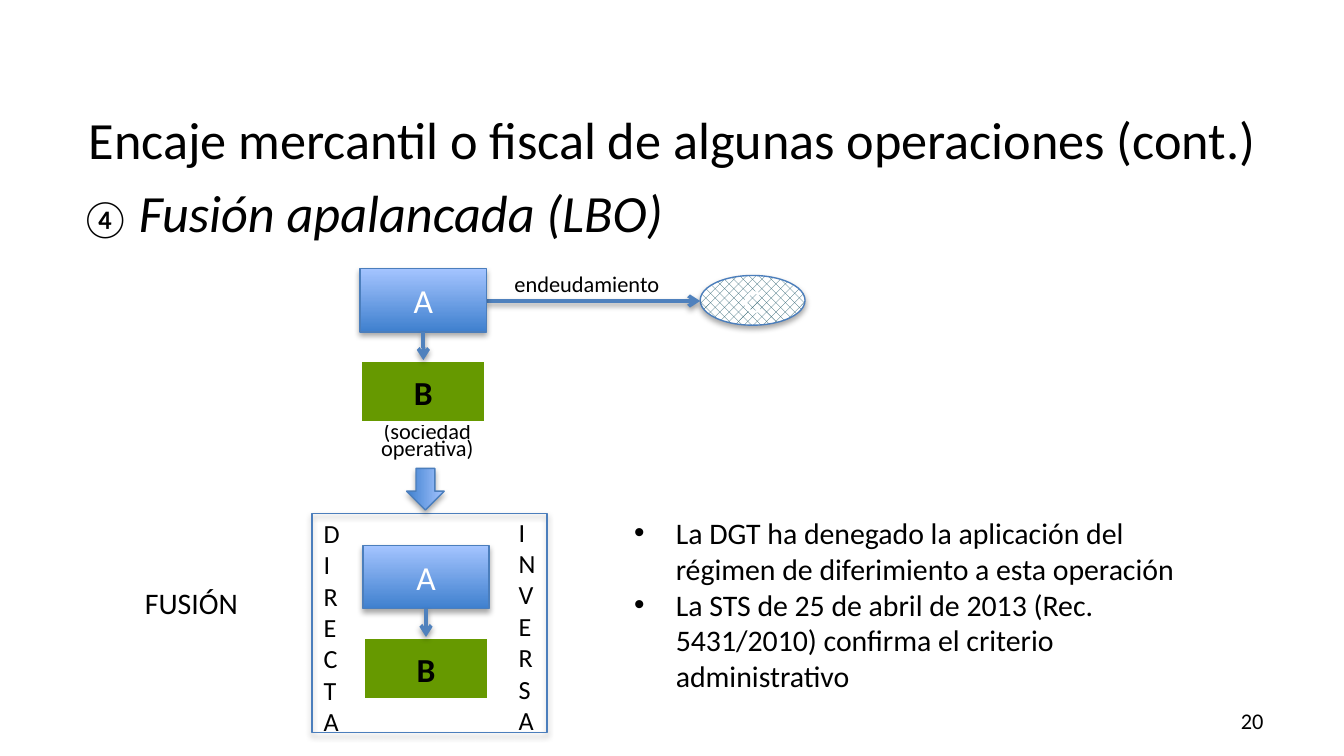
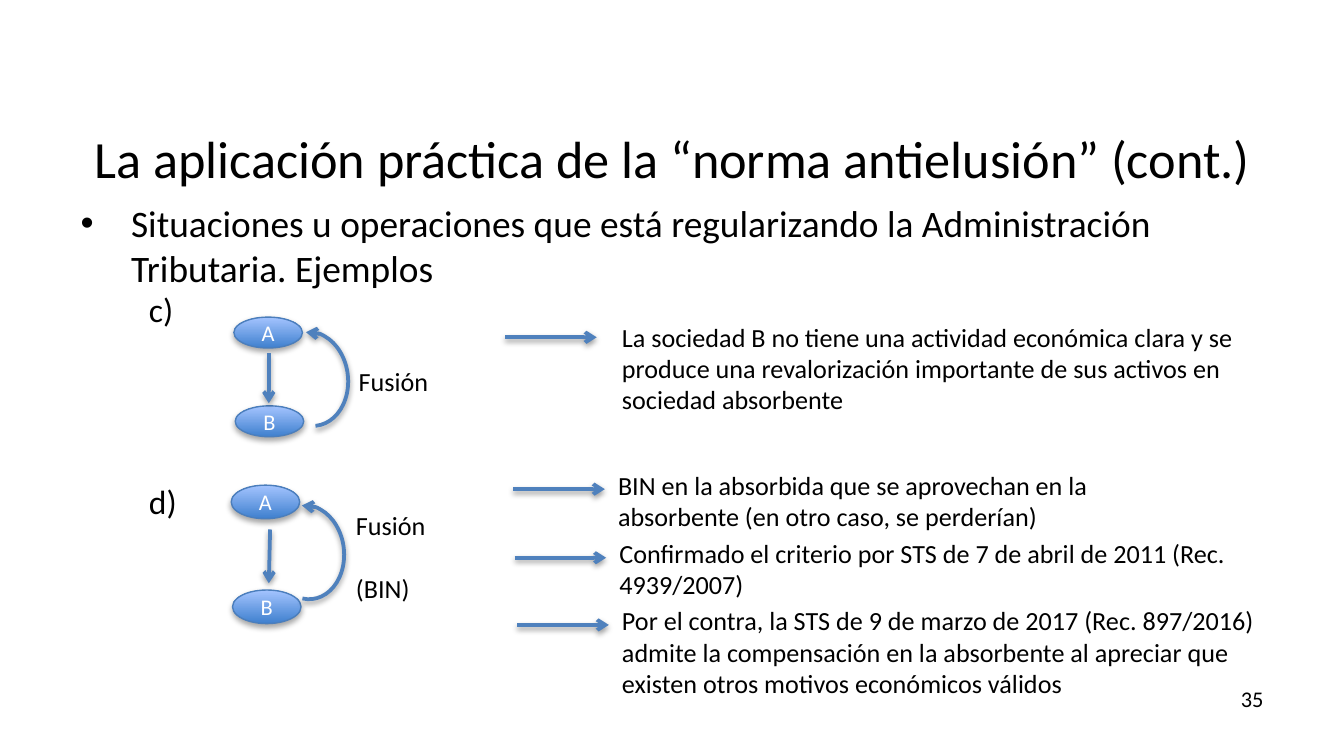
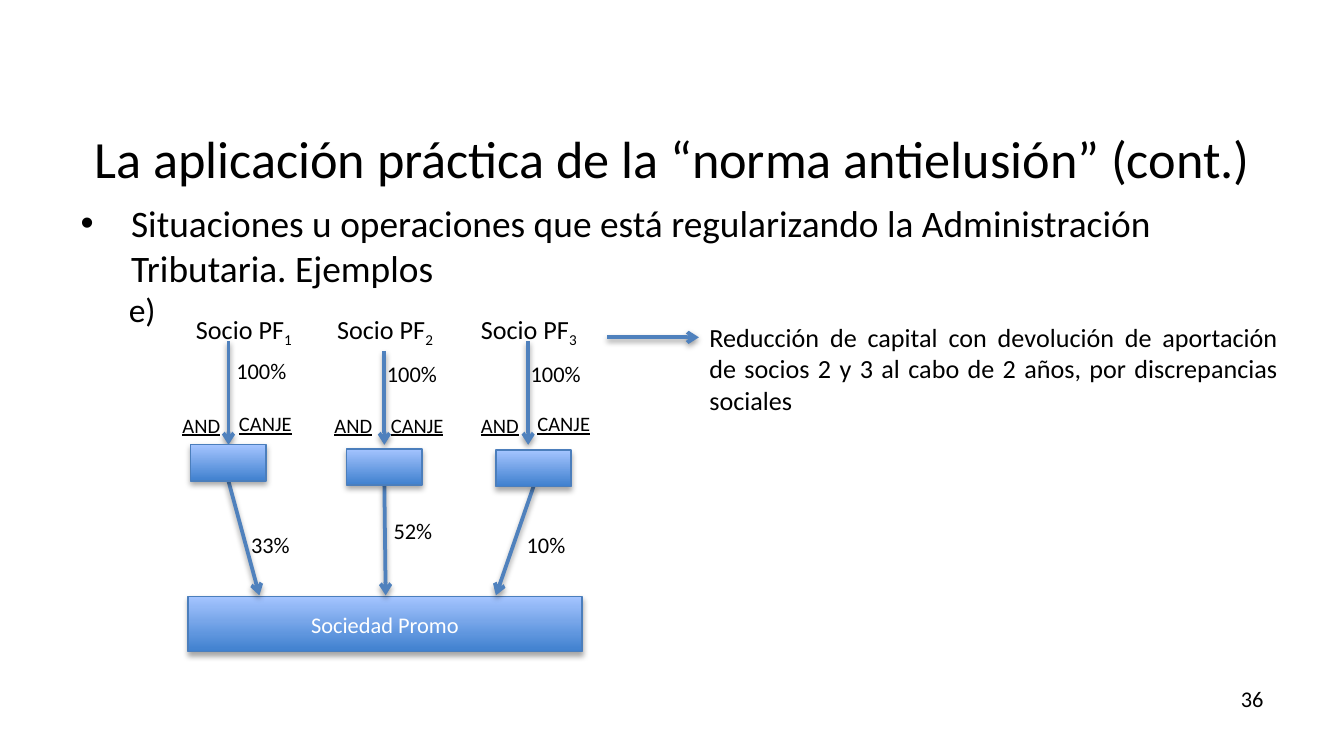
from typing import NamedTuple

from lxml.etree import SubElement
from pptx import Presentation
from pptx.dml.color import RGBColor
from pptx.enum.dml import MSO_PATTERN
from pptx.enum.shapes import MSO_CONNECTOR, MSO_SHAPE as Kind
from pptx.enum.text import MSO_ANCHOR as Anchor, MSO_AUTO_SIZE as Fit, PP_ALIGN as Align
from pptx.oxml.ns import qn
from pptx.util import Inches, Pt

BLACK = RGBColor(0x00, 0x00, 0x00)
WHITE = RGBColor(0xFF, 0xFF, 0xFF)
DEEP = RGBColor(0x3F, 0x80, 0xCE)
PALE = RGBColor(0xA4, 0xC4, 0xFF)
EDGE = RGBColor(0x4B, 0x7E, 0xBC)
ARROW = RGBColor(0x4F, 0x81, 0xBD)
GREEN = RGBColor(0x66, 0x99, 0x00)
TEAL = RGBColor(0x21, 0x59, 0x68)
FONT = "Calibri"
COLS, ROWS = 100, 56.25
CELL = Inches(0.1)


def grid(*cells):
    return [round(cell * CELL) for cell in cells]


def shade(shape, alpha, gap):
    """Add a soft black shadow that falls straight down by gap points."""
    effects = SubElement(shape._element.spPr, qn("a:effectLst"))
    outer = SubElement(effects, qn("a:outerShdw"), blurRad=str(Pt(3.1)),
                       dist=str(Pt(gap)), dir="5400000", rotWithShape="0")
    color = SubElement(outer, qn("a:srgbClr"), val=str(BLACK))
    SubElement(color, qn("a:alpha"), val=str(alpha * 1000))


def mark(para, char=None, indent=0):
    """Give a paragraph a hanging bullet, or none without a char."""
    props = para._p.get_or_add_pPr()
    props.set("marL", str(Inches(indent)))
    props.set("indent", str(-Inches(indent)))
    if char:
        SubElement(props, qn("a:buFont"), typeface="Arial")
        SubElement(props, qn("a:buChar"), char=char)
    else:
        SubElement(props, qn("a:buNone"))


class Deck:
    """Holds the shared style and the current slide; lengths are grid cells."""

    def __init__(self):
        self.file = Presentation()
        self.file.slide_width, self.file.slide_height = grid(COLS, ROWS)
        self.slide = None

    def fill(self, frame, paras, size, color=BLACK, align=None, bullet=None,
             gap=0, lead=None, **look):
        """Fill a frame; a paragraph is a string or a list of (text, look) runs."""
        frame.word_wrap = True
        for i, runs in enumerate(paras):
            para = frame.paragraphs[0] if i == 0 else frame.add_paragraph()
            if bullet is not None:
                mark(para, *bullet)
            para.alignment = align
            para.space_before = Pt(gap if i else 0)
            if lead:
                para.line_spacing = Pt(lead)
            for text, extra in [(runs, {})] if isinstance(runs, str) else runs:
                self.piece(para, text, **{"size": size, "color": color, **look, **extra})

    def piece(self, para, text, size, color, bold=None, italic=None, under=None, base=None):
        run = para.add_run()
        run.text = text
        font = run.font
        font.name, font.size, font.color.rgb = FONT, Pt(size), color
        font.bold, font.italic, font.underline = bold, italic, under
        if base:
            run._r.get_or_add_rPr().set("baseline", str(base * 1000))

    def hold(self, shape, box, *args, **look):
        """Move a placeholder to a box and put text in it."""
        shape.left, shape.top, shape.width, shape.height = grid(*box)
        shape.text_frame.auto_size = Fit.NONE
        self.fill(shape.text_frame, *args, **look)

    def start(self, title, lead, number, tops, **look):
        """Begin a slide with title, lead line and number at the given tops."""
        self.slide = self.file.slides.add_slide(self.file.slide_layouts[1])
        head, body = self.slide.placeholders
        top, mid, foot = tops
        self.hold(head, (5, top, 90, 6.4), [title], 28, align=Align.CENTER)
        head.text_frame.vertical_anchor = Anchor.MIDDLE
        self.hold(body, (5, mid, 90, 7.3), [lead], 20, **look)
        note = self.text((71.7, foot, 23.3, 3), number, 12, align=Align.RIGHT)
        note.text_frame.vertical_anchor = Anchor.MIDDLE

    def text(self, box, paras, size, **look):
        shape = self.slide.shapes.add_textbox(*grid(*box))
        self.fill(shape.text_frame, [paras] if isinstance(paras, str) else paras,
                  size, **look)
        shape.text_frame.auto_size = Fit.SHAPE_TO_FIT_TEXT
        return shape

    def shape(self, kind, box):
        shape = self.slide.shapes.add_shape(kind, *grid(*box))
        shape.line.color.rgb, shape.line.width = EDGE, Pt(0.75)
        return shape

    def label(self, shape, text, size, color=WHITE, **look):
        self.fill(shape.text_frame, [text], size, color, Align.CENTER, **look)
        shape.text_frame.vertical_anchor = Anchor.MIDDLE

    def blue(self, kind, box, text="", size=12):
        shape = self.shape(kind, box)
        shape.fill.gradient()
        shape.fill.gradient_angle = 90
        for stop, color in zip(shape.fill.gradient_stops, (DEEP, PALE)):
            stop.color.rgb = color
        shade(shape, 35, 1.8)
        if text:
            self.label(shape, text, size)
        return shape

    def green(self, box, text):
        shape = self.shape(Kind.RECTANGLE, box)
        shape.fill.solid()
        shape.fill.fore_color.rgb = GREEN
        shape.line.color.rgb, shape.line.width = WHITE, Pt(2.25)
        shape.shadow.inherit = False
        self.label(shape, text, 18, BLACK, bold=True)

    def hatch(self, box, text):
        shape = self.shape(Kind.OVAL, box)
        shape.fill.patterned()
        shape.fill.pattern = MSO_PATTERN.PERCENT_50
        shape.fill.fore_color.rgb, shape.fill.back_color.rgb = TEAL, WHITE
        shade(shape, 35, 1.8)
        self.label(shape, text, 18)

    def frame(self, box):
        shape = self.shape(Kind.RECTANGLE, box)
        shape.fill.background()
        shade(shape, 35, 1.8)

    def ink(self, shape, end):
        """Style an arrow line with its head at the given end."""
        shape.line.color.rgb, shape.line.width = ARROW, Pt(2)
        line = shape._element.spPr.find(qn("a:ln"))
        SubElement(line, qn(end), type="arrow")
        shade(shape, 38, 1.6)

    def arrow(self, *ends):
        line = self.slide.shapes.add_connector(MSO_CONNECTOR.STRAIGHT, *grid(*ends))
        self.ink(line, "a:tailEnd")

    def arc(self, left, top, stop):
        shape = self.shape(Kind.ARC, (left, top, 5.5, 7))
        shape.adjustments[0], shape.adjustments[1] = 162, stop
        shape.rotation = 353.7
        shape.fill.background()
        self.ink(shape, "a:headEnd")


def merger(deck):
    deck.start("Encaje mercantil o fiscal de algunas operaciones (cont.)",
               [("④ ", {}), ("Fusión apalancada (LBO)", {"size": 28, "italic": True})],
               "20", (7.1, 12.9, 52.1), bullet=())
    deck.hatch((52.1, 20.5, 7.8, 3.7), "C")
    deck.arrow(36.2, 22.4, 52.1, 22.4)
    deck.text((37.3, 19.6, 13, 3), "endeudamiento", 12)
    deck.text((27, 31.3, 9.6, 3.7), "(sociedad operativa)", 12,
              align=Align.CENTER, lead=9)
    deck.frame((23.2, 38.2, 17.5, 16.3))
    for left, top in ((26.8, 20), (27, 40.6)):
        deck.blue(Kind.RECTANGLE, (left, top, 9.4, 4.7), "A", 18)
        deck.green((left, top + 6.8, 9.4, 4.7), "B")
        deck.arrow(left + 4.7, top + 4.7, left + 4.7, top + 6.8)
    deck.text((9.8, 43, 9.8, 3.7), "FUSIÓN", 16)
    for left, top, word in ((23.1, 38, "DIRECTA"), (37.6, 37.9, "INVERSA")):
        deck.text((left, top, 3.2, 17.5), list(word), 14)
    deck.text((46.2, 37.8, 44.2, 14.5), [
        "La DGT ha denegado la aplicación del régimen de diferimiento a esta operación",
        "La STS de 25 de abril de 2013 (Rec. 5431/2010) confirma el criterio administrativo",
    ], 16, bullet=("•", 0.31))
    deck.blue(Kind.RIGHT_ARROW, (30.1, 35, 3.1, 2.8)).rotation = 90


def rule(deck, number):
    """Start a slide on the anti-avoidance rule."""
    deck.start("La aplicación práctica de la “norma antielusión” (cont.)",
               "Situaciones u operaciones que está regularizando la Administración "
               "Tributaria. Ejemplos", number, (8.5, 14.4, 50.5))


def cases(deck):
    rule(deck, "35")
    for left, top, drop, high in ((17.4, 23.6, 6.6, 2.3), (17.2, 36.1, 7.8, 2.5)):
        deck.blue(Kind.OVAL, (left, top, 5.1, high), "A")
        deck.blue(Kind.OVAL, (left + 0.1, top + drop, 5.1, high), "B")
    deck.arrow(20, 26.3, 20, 30)
    deck.arrow(20.1, 39.4, 20, 43.4)
    deck.arc(20.4, 24.7, 54.55)
    deck.arc(20.1, 37.6, 61.24)
    deck.text((10.1, 21, 4.1, 4), "c)", 18)
    deck.text((10.1, 35.3, 4.6, 4), "d)", 18)
    deck.text((25.7, 26.7, 7.7, 3.4), "Fusión", 14)
    deck.text((25.5, 37.4, 7.7, 8.1), ["Fusión", "(BIN)"], 14, gap=17)
    notes = (
        (45.3, 23.4, 49.3, 37.6, 25.1,
         "La sociedad B no tiene una actividad económica clara y se produce una "
         "revalorización importante de sus activos en sociedad absorbente"),
        (45, 34.4, 45.9, 38.2, 36.4,
         "BIN en la absorbida que se aprovechan en la absorbente "
         "(en otro caso, se perderían)"),
        (45.1, 39.5, 49.4, 38.3, 41.5,
         "Confirmado el criterio por STS de 7 de abril de 2011 (Rec. 4939/2007)"),
        (45.3, 44.5, 49.4, 38.5, 46.5,
         "Por el contra, la STS de 9 de marzo de 2017 (Rec. 897/2016) admite la "
         "compensación en la absorbente al apreciar que existen otros motivos "
         "económicos válidos"),
    )
    for left, top, wide, tail, level, words in notes:
        deck.text((left, top, wide, 5.7), words, 14)
        deck.arrow(tail, level, tail + 6.8, level)


class Partner(NamedTuple):
    name: tuple  # left and width
    stem: tuple  # x and top of the upper arrow
    full: tuple  # place of the 100% label
    tags: tuple  # left of AND, top of CANJE
    firm: tuple  # place of the small box
    foot: float  # x where the lower arrow ends
    share: str
    spot: tuple  # place of the share


PARTNERS = (
    Partner((12.6, 11.1), (17, 25.4), (16.6, 26.1), (12.6, 30.1), (14.2, 33.1),
            19.3, "33%", (17.7, 39)),
    Partner((23.2, 10.9), (28.6, 26.1), (27.8, 26.3), (23.9, 30.2), (25.8, 33.4),
            28.7, "52%", (28.3, 38)),
    Partner((34.6, 9.5), (39.3, 25.4), (38.5, 26.3), (34.8, 30.1), (36.9, 33.5),
            36.9, "10%", (38.2, 39)),
)


def stakes(deck):
    rule(deck, "36")
    deck.text((51.8, 23.4, 44.3, 8.1),
              "Reducción de capital con devolución de aportación de socios 2 y 3 "
              "al cabo de 2 años, por discrepancias sociales", 14, align=Align.JUSTIFY)
    deck.arrow(45.2, 25.1, 52, 25.1)
    deck.text((8.6, 21, 4.1, 4), "e)", 18)
    deck.blue(Kind.RECTANGLE, (14, 44.4, 29.3, 4.1), "Sociedad Promo")
    for rank, part in enumerate(PARTNERS, 1):
        left, wide = part.name
        deck.text((left, 22.8, wide, 3.4),
                  [[("Socio PF", {}), (str(rank), {"base": -25})]], 14,
                  align=Align.CENTER)
        stem, top = part.stem
        deck.arrow(stem, top, stem, 33.1)
        left, top = part.tags
        deck.text((left, 30.2, 5.6, 2.9), "AND", 11, under=True)
        deck.text((left + 4.2, top, 6.4, 2.9), "CANJE", 11, under=True)
        left, top = part.firm
        deck.arrow(left + 2.8, top + 2.7, part.foot, 44.3)
        deck.blue(Kind.RECTANGLE, (left, top, 5.6, 2.7))
        deck.text((*part.full, 5.8, 3), "100%", 12)
        deck.text((*part.spot, 5.6, 3), part.share, 12)


def main():
    deck = Deck()
    merger(deck)
    cases(deck)
    stakes(deck)
    deck.file.save("out.pptx")


if __name__ == "__main__":
    main()
